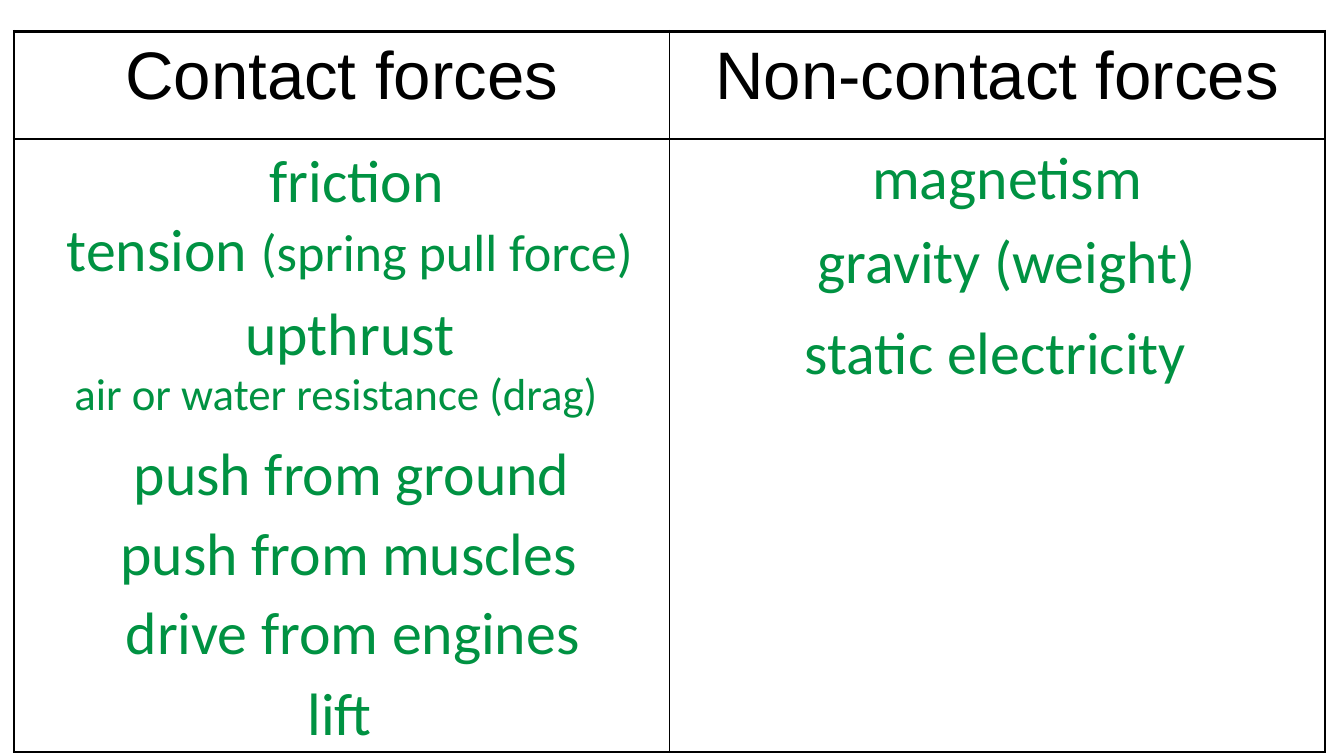
import pptx
import pptx.util
import pptx.dml.color
import pptx.enum.text
import pptx.oxml.ns
import lxml.etree

Inches = pptx.util.Inches
Pt = pptx.util.Pt
CENTER = pptx.enum.text.PP_ALIGN.CENTER


def color(text):
    return pptx.dml.color.RGBColor.from_string(text)


class Page:
    ink = "000000"
    green = "009242"
    head = "Arial"
    body = "Calibri"
    thick = 2.25
    thin = 1

    def __init__(self, slide):
        self.slide = slide

    def style(self, font, name, size, tint):
        font.name = name
        font.size = Pt(size)
        font.color.rgb = color(tint)

    def edge(self, cell, side, width):
        qn = pptx.oxml.ns.qn
        line = lxml.etree.Element(qn("a:ln" + side), w=str(Pt(width)))
        fill = lxml.etree.SubElement(line, qn("a:solidFill"))
        lxml.etree.SubElement(fill, qn("a:srgbClr"), val=self.ink)
        return line

    def cell(self, cell, text, widths):
        cell.fill.background()
        cell.margin_left = cell.margin_right = Inches(0.13)
        cell.margin_top = cell.margin_bottom = Inches(0.07)
        para = cell.text_frame.paragraphs[0]
        para.alignment = CENTER
        if text:
            para.text = text
            self.style(para.font, self.head, 48, self.ink)
        props = cell._tc.get_or_add_tcPr()
        for spot, (side, width) in enumerate(zip("LRTB", widths)):
            props.insert(spot, self.edge(cell, side, width))

    def table(self, box, rows, heights):
        count = len(rows[0])
        frame = self.slide.shapes.add_table(len(rows), count, *map(Inches, box))
        table = frame.table
        table.first_row = table.horz_banding = False
        for row, height in zip(table.rows, heights):
            row.height = Inches(height)
        for r, row in enumerate(rows):
            for c, text in enumerate(row):
                outer = (c == 0, c == count - 1, r == 0, r == len(rows) - 1)
                widths = [self.thick if out else self.thin for out in outer]
                self.cell(table.cell(r, c), text, widths)

    def label(self, left, top, width, text, size=42.7, note="", small=37.3):
        height = 0.82 if size > 40 else 0.64
        box = self.slide.shapes.add_textbox(*map(Inches, (left, top, width, height)))
        frame = box.text_frame
        frame.word_wrap = True
        frame.auto_size = pptx.enum.text.MSO_AUTO_SIZE.SHAPE_TO_FIT_TEXT
        para = frame.paragraphs[0]
        para.alignment = CENTER
        self.style(para.font, self.body, size, self.green)
        for part, points in ((text, size), (note, small)):
            if part:
                run = para.add_run()
                run.text = part
                self.style(run.font, self.body, points, self.green)


def main():
    deck = pptx.Presentation()
    deck.slide_width = Inches(13.33)
    deck.slide_height = Inches(7.5)
    page = Page(deck.slides.add_slide(deck.slide_layouts[6]))

    heads = ("Contact forces", "Non-contact forces")
    page.table((0.14, 0.31, 13, 7.15), (heads, ("", "")), (1.07, 6.08))

    page.label(8.4, 1.34, 3.18, "magnetism")
    page.label(1.95, 1.37, 3.18, "friction")
    page.label(0, 2.05, 7.06, "tension ", note="(spring pull force) ")
    page.label(7.49, 2.17, 4.99, "gravity (weight)")
    page.label(7.67, 3.07, 4.41, "static electricity")
    page.label(1.88, 2.88, 3.18, "upthrust")
    page.label(0, 3.58, 6.67, "air or water resistance (drag)", size=32)
    page.label(0.49, 4.27, 6, "push from ground")
    page.label(0.46, 5.07, 6, "push from muscles")
    page.label(0.5, 5.85, 6, "drive from engines")
    page.label(0.37, 6.65, 6, "lift")

    deck.save("out.pptx")


if __name__ == "__main__":
    main()
